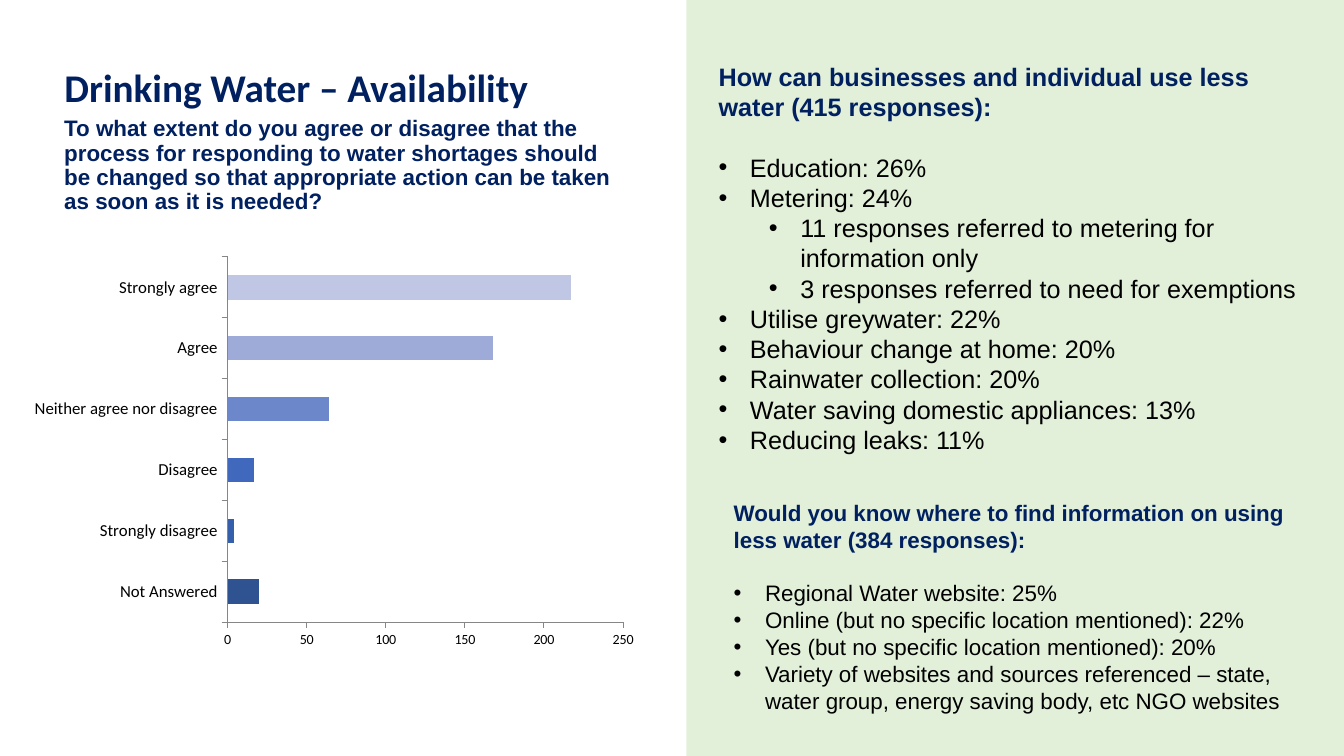
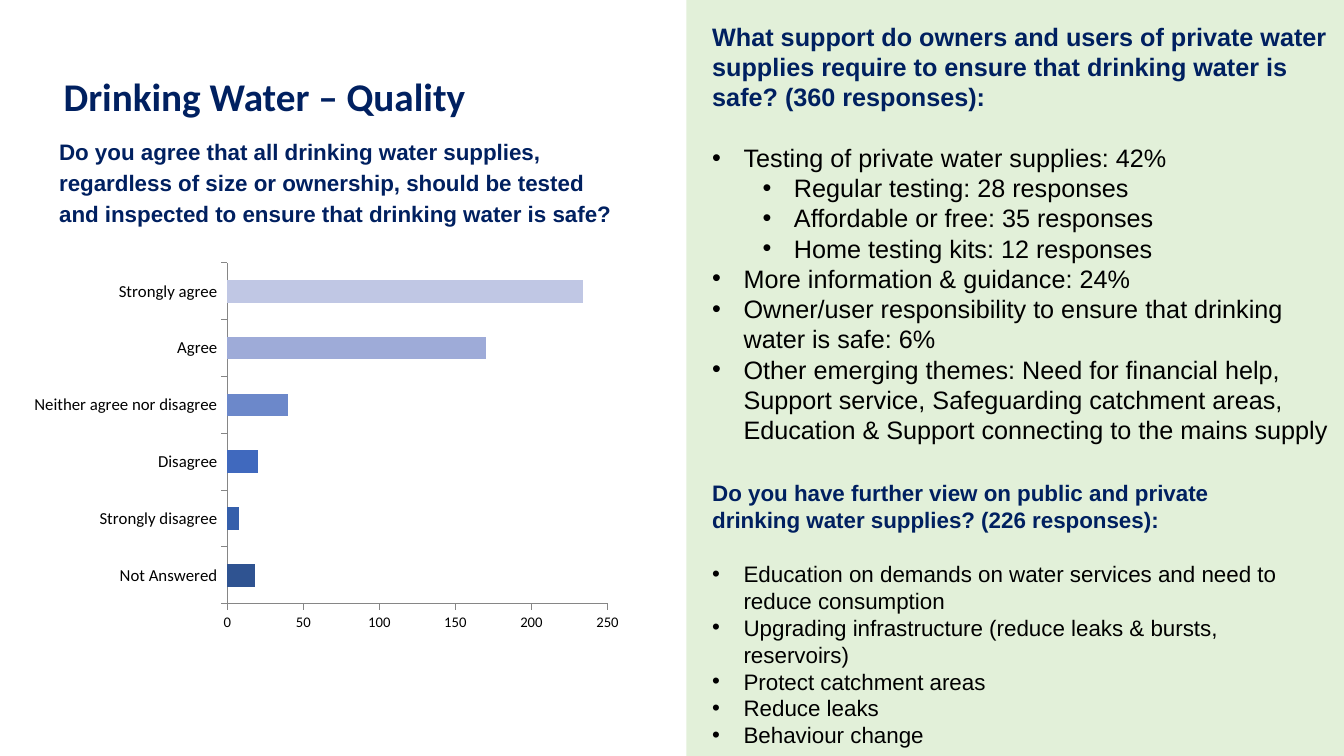
from lxml.etree import SubElement as Sub
from pptx import Presentation as Deck
from pptx.chart.data import CategoryChartData as Data
from pptx.dml.color import RGBColor as Rgb
from pptx.enum.chart import XL_CHART_TYPE as Kind, XL_TICK_MARK as Tick
from pptx.enum.shapes import MSO_SHAPE as Form
from pptx.enum.text import MSO_ANCHOR as Anchor, MSO_AUTO_SIZE as Fit, PP_ALIGN as Align
from pptx.oxml.ns import qn
from pptx.util import Cm, Pt

HUES = {"navy": "002060", "black": "000000", "green": "E2F0D9", "axis": "868686"}
BARS = ["2F5391", "355FAB", "4069BE", "6C88CA", "9EABD8", "C0C7E4"]
CATS = ["Not Answered", "Strongly disagree", "Disagree",
        "Neither agree nor disagree", "Agree", "Strongly agree"]
WIDE, HIGH, EDGE = 33.87, 19.05, 17.3
HANG = 0.79
STEP = 1.27


def tint(name):
    return Rgb.from_string(HUES.get(name, name))


def place(shape, box):
    shape.left, shape.top, shape.width, shape.height = (Cm(n) for n in box)


def write(frame, text, size=18, font="Arial", hue="navy", bold=True,
          level=None, line=1.0, after=0, first=True):
    para = frame.paragraphs[0] if first else frame.add_paragraph()
    if level is not None:
        para.level = level
        props = para._p.get_or_add_pPr()
        props.set("marL", str(Cm(HANG + level * STEP)))
        props.set("indent", str(-Cm(HANG)))
        Sub(props, qn("a:buFont"), typeface="Arial")
        Sub(props, qn("a:buChar"), char="•")
    para.alignment = Align.LEFT
    para.line_spacing = line
    para.space_before, para.space_after = Pt(0), Pt(after)
    run = para.add_run()
    run.text = text
    run.font.name, run.font.size, run.font.bold = font, Pt(size), bold
    run.font.color.rgb = tint(hue)


def head(slide, box, text):
    title = slide.shapes.title
    place(title, box)
    frame = title.text_frame
    frame.auto_size, frame.vertical_anchor = Fit.NONE, Anchor.MIDDLE
    write(frame, text, size=28, font="Calibri", line=0.9)


def ask(slide, box, text, line):
    note = slide.shapes.add_textbox(*(Cm(n) for n in box))
    note.text_frame.word_wrap = True
    write(note.text_frame, text, size=16, line=line)


def block(slide, box):
    shape = slide.shapes.add_shape(Form.RECTANGLE, *(Cm(n) for n in box))
    shape.shadow.inherit = False
    shape.fill.solid()
    shape.fill.fore_color.rgb = tint("green")
    shape.line.fill.background()
    return shape


def listing(slide, box, text, items, size):
    frame = block(slide, box).text_frame
    frame.word_wrap, frame.vertical_anchor = True, Anchor.TOP
    write(frame, text, size=size, after=1.2 * size)
    for level, item in items:
        write(frame, item, size=size, hue="black", bold=False, level=level, first=False)


def panel(slide, *lists):
    block(slide, (EDGE, 0, WIDE - EDGE, HIGH))
    for size, (box, text, items) in zip((18, 16), lists):
        listing(slide, box, text, items, size)


def graph(slide, box, vals, small):
    data = Data()
    data.categories = CATS
    data.add_series("Series 1", vals)
    chart = slide.shapes.add_chart(Kind.BAR_CLUSTERED, *(Cm(n) for n in box), data).chart
    chart.has_legend = chart.has_title = False
    chart.font.name, chart.font.size = "Calibri", Pt(18)
    chart.font.color.rgb = tint("black")
    for axis, size in ((chart.category_axis, 12), (chart.value_axis, small)):
        axis.has_major_gridlines = False
        axis.major_tick_mark = Tick.OUTSIDE
        axis.tick_labels.font.size = Pt(size)
        axis.format.line.color.rgb = tint("axis")
        axis.format.line.width = Pt(0.75)
    scale = chart.value_axis
    scale.minimum_scale, scale.maximum_scale, scale.major_unit = 0, 250, 50
    plot = chart.plots[0]
    plot.gap_width, plot.vary_by_categories = 150, False
    for spot, hue in enumerate(BARS):
        fill = plot.series[0].points[spot].format.fill
        fill.solid()
        fill.fore_color.rgb = tint(hue)


def supply(slide):
    head(slide, (1.37, 1.5, 29.21, 1.55), "Drinking Water – Availability")
    ask(slide, (1.37, 2.84, 14.58, 2.08),
        "To what extent do you agree or disagree that the process for responding to "
        "water shortages should be changed so that appropriate action can be taken "
        "as soon as it is needed?", 0.9)
    panel(slide,
          ((17.86, 1.42, 15.44, 11.02),
           "How can businesses and individual use less water (415 responses):",
           [(0, "Education: 26%"),
            (0, "Metering: 24%"),
            (1, "11 responses referred to metering for information only"),
            (1, "3 responses referred to need for exemptions"),
            (0, "Utilise greywater: 22%"),
            (0, "Behaviour change at home: 20%"),
            (0, "Rainwater collection: 20%"),
            (0, "Water saving domestic appliances: 13%"),
            (0, "Reducing leaks: 11%")]),
          ((18.24, 12.45, 15.06, 5.74),
           "Would you know where to find information on using less water (384 responses):",
           [(0, "Regional Water website: 25%"),
            (0, "Online (but no specific location mentioned): 22%"),
            (0, "Yes (but no specific location mentioned): 20%"),
            (0, "Variety of websites and sources referenced – state, "
                "water group, energy saving body, etc NGO websites")]))
    graph(slide, (0.56, 6.27, 15.72, 10.26), (20, 4, 17, 64, 168, 217), 10)


def purity(slide):
    head(slide, (1.35, 0.91, 30.48, 3.18), "Drinking Water – Quality")
    graph(slide, (0.56, 6.43, 15.34, 9.68), (18, 8, 20, 40, 170, 234), 10.5)
    ask(slide, (1.24, 3.25, 14.58, 2.08),
        "Do you agree that all drinking water supplies, regardless of size or ownership, "
        "should be tested and inspected to ensure that drinking water is safe?", 1.15)
    panel(slide,
          ((17.7, 0.41, 16.17, 11.02),
           "What support do owners and users of private water supplies require "
           "to ensure that drinking water is safe? (360 responses):",
           [(0, "Testing of private water supplies: 42%"),
            (1, "Regular testing: 28 responses"),
            (1, "Affordable or free: 35 responses"),
            (1, "Home testing kits: 12 responses"),
            (0, "More information & guidance: 24%"),
            (0, "Owner/user responsibility to ensure that drinking water is safe: 6%"),
            (0, "Other emerging themes: Need for financial help, Support service, "
                "Safeguarding catchment areas, Education & Support connecting "
                "to the mains supply")]),
          ((17.7, 11.96, 15.06, 7.09),
           "Do you have further view on public and private drinking water supplies? "
           "(226 responses):",
           [(0, "Education on demands on water services and need to reduce consumption"),
            (0, "Upgrading infrastructure (reduce leaks & bursts, reservoirs)"),
            (0, "Protect catchment areas"),
            (0, "Reduce leaks"),
            (0, "Behaviour change")]))


def main():
    deck = Deck()
    deck.slide_width, deck.slide_height = Cm(WIDE), Cm(HIGH)
    for build in (supply, purity):
        build(deck.slides.add_slide(deck.slide_layouts[5]))
    deck.save("out.pptx")


if __name__ == "__main__":
    main()
